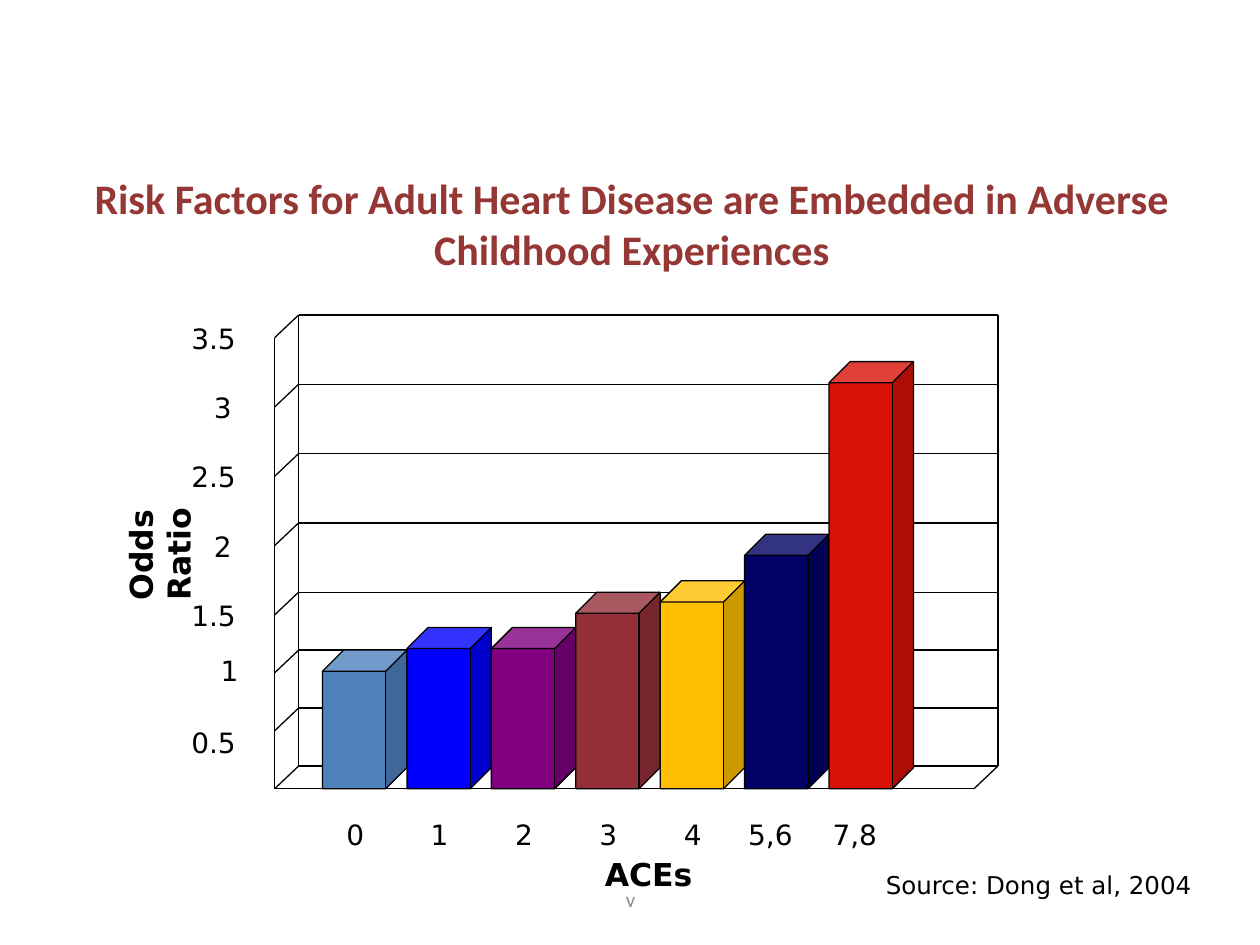
from lxml import etree
from pptx import Presentation
from pptx.dml.color import RGBColor
from pptx.enum.shapes import MSO_CONNECTOR, MSO_SHAPE
from pptx.enum.text import MSO_ANCHOR, MSO_AUTO_SIZE, PP_ALIGN
from pptx.oxml.ns import qn
from pptx.util import Inches, Pt

STRAIGHT = MSO_CONNECTOR.STRAIGHT
CUBE = MSO_SHAPE.CUBE
MIDDLE = MSO_ANCHOR.MIDDLE
NO_AUTOSIZE = MSO_AUTO_SIZE.NONE
LEFT, CENTER, RIGHT = PP_ALIGN.LEFT, PP_ALIGN.CENTER, PP_ALIGN.RIGHT

COLORS = {
    "title": "953735", "ink": "000000", "footer": "8C8C8C",
    "steel": "4F81BD", "blue": "0000FF", "purple": "800080",
    "maroon": "952F37", "amber": "FFBE00", "navy": "000066", "red": "D91107",
}
BODY_FONT, TITLE_FONT = "DejaVu Sans", "Calibri"

TITLE = "Risk Factors for Adult Heart Disease are Embedded in Adverse Childhood Experiences"

# ACE score, bar top, colour
BARS = [
    ("0", 5.16, "steel"), ("1", 4.98, "blue"), ("2", 4.98, "purple"),
    ("3", 4.70, "maroon"), ("4", 4.61, "amber"), ("5,6", 4.24, "navy"),
    ("7,8", 2.87, "red"),
]
# Odds ratio, gridline height, label left, label top
TICKS = [
    ("0.5", 5.62, 1.42, 5.71), ("1", 5.16, 1.65, 5.14),
    ("1.5", 4.70, 1.42, 4.70), ("2", 4.15, 1.60, 4.15),
    ("2.5", 3.60, 1.42, 3.60), ("3", 3.05, 1.60, 3.05),
    ("3.5", 2.50, 1.42, 2.50),
]
# Text, box, size, colour, font, bold, alignment, left inset, rotation
CAPTIONS = [
    ("ACEs", (4.28, 6.74, 1.43, 0.4), 18, "ink", BODY_FONT, True, LEFT, 0.52, 0),
    ("Source: Dong et al, 2004", (6.58, 6.86, 3.25, 0.4), 14, "ink", BODY_FONT, False, LEFT, 0.45, 0),
    ("Odds Ratio", (0.25, 3.8, 1.73, 0.4), 18, "ink", BODY_FONT, True, LEFT, 0.1, 270),
    ("v", (3.42, 6.99, 3.17, 0.32), 12, "footer", TITLE_FONT, False, CENTER, 0.1, 0),
]

# Chart frame: back wall, floor and the offset to the front edge
WALL_LEFT, WALL_RIGHT, WALL_TOP, WALL_BOTTOM = 2.37, 7.92, 2.5, 6.08
DEPTH_X, DEPTH_Y = 0.19, 0.18
FRONT_LEFT, FRONT_BOTTOM = WALL_LEFT - DEPTH_X, WALL_BOTTOM + DEPTH_Y
BAR_LEFT, BAR_WIDTH = 2.56, 0.67
LABEL_TOP, LABEL_HEIGHT = 6.44, 0.37


def rgb(name):
    return RGBColor.from_string(COLORS[name])


def style_text(frame, text, size, color, font, bold=False, align=LEFT):
    frame.text = text
    frame.auto_size = NO_AUTOSIZE
    paragraph = frame.paragraphs[0]
    paragraph.alignment = align
    run_font = paragraph.runs[0].font
    run_font.size, run_font.name, run_font.bold = Pt(size), font, bold
    run_font.color.rgb = rgb(color)


def add_text(slide, text, box, size, color, font, bold=False, align=LEFT,
             inset=0.1, rotation=0, wrap=True):
    caption = slide.shapes.add_textbox(*map(Inches, box))
    caption.rotation = rotation
    frame = caption.text_frame
    style_text(frame, text, size, color, font, bold, align)
    frame.word_wrap = wrap
    frame.margin_left = Inches(inset)


def add_axis_label(slide, text, left, top, align=LEFT):
    width = 0.34 if len(text) == 1 else 0.56
    add_text(slide, text, (left, top, width, LABEL_HEIGHT), 16, "ink",
             BODY_FONT, align=align, wrap=False)


def add_line(slide, x1, y1, x2, y2):
    edge = slide.shapes.add_connector(STRAIGHT, *map(Inches, (x1, y1, x2, y2)))
    edge.line.color.rgb = rgb("ink")
    edge.line.width = Pt(0.75)
    etree.SubElement(edge._element.spPr, qn("a:effectLst"))


def main():
    prs = Presentation()
    prs.slide_width, prs.slide_height = Inches(10), Inches(7.5)
    slide = prs.slides.add_slide(prs.slide_layouts[5])

    # Title
    title = slide.shapes.title
    title.left, title.top, title.width, title.height = map(Inches, (0.53, 1.29, 8.97, 0.96))
    style_text(title.text_frame, TITLE, 24, "title", TITLE_FONT, True, CENTER)
    title.text_frame.vertical_anchor = MIDDLE

    # Captions and axis titles
    for caption in CAPTIONS:
        add_text(slide, *caption)

    # Gridlines on the back wall, behind the bars
    grid = [WALL_BOTTOM] + [y for _, y, _, _ in TICKS]
    for y in grid:
        add_line(slide, WALL_RIGHT, y, WALL_LEFT, y)

    # Front axes
    add_line(slide, FRONT_LEFT, WALL_TOP + DEPTH_Y, FRONT_LEFT, FRONT_BOTTOM)
    add_line(slide, WALL_RIGHT - DEPTH_X, FRONT_BOTTOM, FRONT_LEFT, FRONT_BOTTOM)

    # Bars and their scores
    for i, (score, top, color) in enumerate(BARS):
        left = BAR_LEFT + i * BAR_WIDTH
        bar = slide.shapes.add_shape(
            CUBE, *map(Inches, (left, top, BAR_WIDTH, FRONT_BOTTOM - top)))
        bar.adjustments[0] = 0.25
        bar.shadow.inherit = False
        bar.fill.solid()
        bar.fill.fore_color.rgb = rgb(color)
        bar.line.color.rgb = rgb("ink")
        bar.line.width = Pt(0.75)
        shift = 0.09 if len(score) == 1 else -0.07
        add_axis_label(slide, score, left + shift, LABEL_TOP)

    # Wall edges and the slanted joins to the front
    for x in (WALL_LEFT, WALL_RIGHT):
        add_line(slide, x, WALL_TOP, x, WALL_BOTTOM)
    joins = [(WALL_LEFT, y) for y in grid] + [(WALL_RIGHT, WALL_BOTTOM)]
    for x, y in joins:
        add_line(slide, x, y, x - DEPTH_X, y + DEPTH_Y)

    # Odds ratio labels
    for ratio, _, left, top in TICKS:
        add_axis_label(slide, ratio, left, top, RIGHT if ratio == "1" else LEFT)

    prs.save("out.pptx")


if __name__ == "__main__":
    main()
